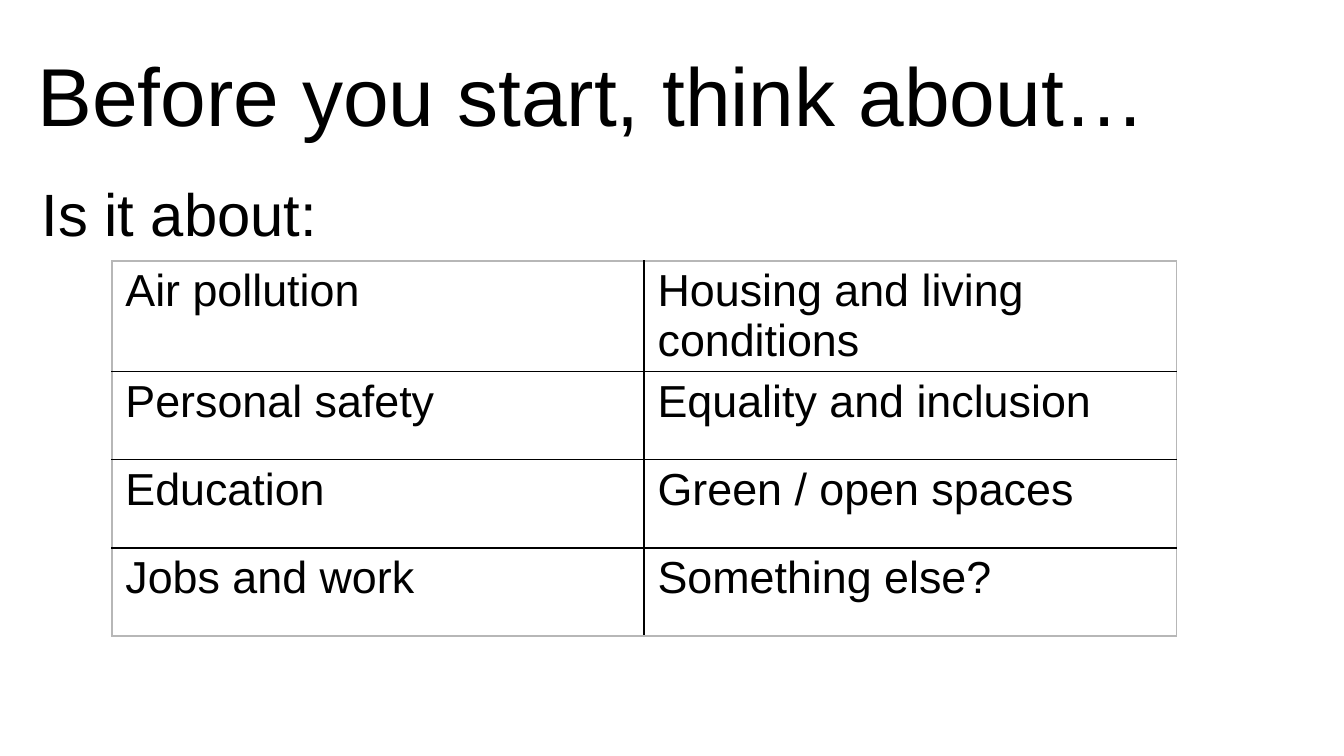
from lxml.etree import SubElement
from pptx import Presentation
from pptx.dml.color import RGBColor
from pptx.enum.text import MSO_ANCHOR, MSO_AUTO_SIZE, PP_ALIGN
from pptx.oxml.ns import qn
from pptx.util import Inches, Pt

WIDE = Inches(10)
HIGH = WIDE * 9 // 16
FONT, INK, EDGE, PAPER = "Arial", "000000", "B7B7B7", "FFFFFF"
TOPICS = [
    ("Air pollution", "Housing and living conditions"),
    ("Personal safety", "Equality and inclusion"),
    ("Education", "Green / open spaces"),
    ("Jobs and work", "Something else?"),
]


def color(code):
    return RGBColor.from_string(code)


def area(left, top, width, height):
    """Turn percentages of the slide into a box."""
    return [round(share * size / 100) for share, size in
            ((left, WIDE), (top, HIGH), (width, WIDE), (height, HIGH))]


def style(para, size):
    para.alignment = PP_ALIGN.LEFT
    for run in para.runs:
        run.font.name = FONT
        run.font.size = Pt(size)
        run.font.color.rgb = color(INK)


def fill_holder(holder, box, text, size, anchor):
    """Place a placeholder in its box and set its single line of text."""
    holder.left, holder.top, holder.width, holder.height = box
    frame = holder.text_frame
    frame.text = text
    frame.word_wrap = True
    frame.auto_size = MSO_AUTO_SIZE.NONE
    frame.vertical_anchor = anchor
    frame.margin_left = frame.margin_right = 0
    frame.margin_top = frame.margin_bottom = 0
    para = frame.paragraphs[0]
    style(para, size)
    return para


def add_title(slide, box):
    fill_holder(slide.shapes.title, box, "Before you start, think about…",
                44, MSO_ANCHOR.MIDDLE)


def add_prompt(slide, box):
    para = fill_holder(slide.placeholders[1], box, "Is it about:",
                       32, MSO_ANCHOR.TOP)
    para.space_before = Pt(6.4)
    # Hanging indent without a bullet
    props = para._p.get_or_add_pPr()
    props.set("marL", str(Inches(0.5)))
    props.set("indent", str(Inches(-0.47)))
    SubElement(props, qn("a:buNone"))


def add_border(cell, side, code):
    line = SubElement(cell._tc.get_or_add_tcPr(), qn(f"a:ln{side}"),
                      w=str(Pt(1)))
    solid = SubElement(line, qn("a:solidFill"))
    SubElement(solid, qn("a:srgbClr"), val=code)


def add_topics(slide, box):
    rows, cols = len(TOPICS), len(TOPICS[0])
    table = slide.shapes.add_table(rows, cols, *box).table
    table.first_row = table.horz_banding = False
    for r, topics in enumerate(TOPICS):
        for c, topic in enumerate(topics):
            cell = table.cell(r, c)
            cell.text_frame.text = topic
            style(cell.text_frame.paragraphs[0], 24)
            cell.margin_left = cell.margin_right = Inches(0.1)
            cell.margin_top = cell.margin_bottom = Inches(0.04)
            # Grey around the table, black between its cells
            outer = {"L": c == 0, "R": c == cols - 1,
                     "T": r == 0, "B": r == rows - 1}
            for side, rim in outer.items():
                add_border(cell, side, EDGE if rim else INK)
            cell.fill.solid()
            cell.fill.fore_color.rgb = color(PAPER)


def main():
    deck = Presentation()
    deck.slide_width, deck.slide_height = WIDE, HIGH
    slide = deck.slides.add_slide(deck.slide_layouts[1])
    add_title(slide, area(2.8, 4, 92.1, 16.7))
    add_prompt(slide, area(2.8, 23.4, 92.1, 66))
    add_topics(slide, area(8.33, 34.5, 79.2, 46.7))
    deck.save("out.pptx")


if __name__ == "__main__":
    main()
